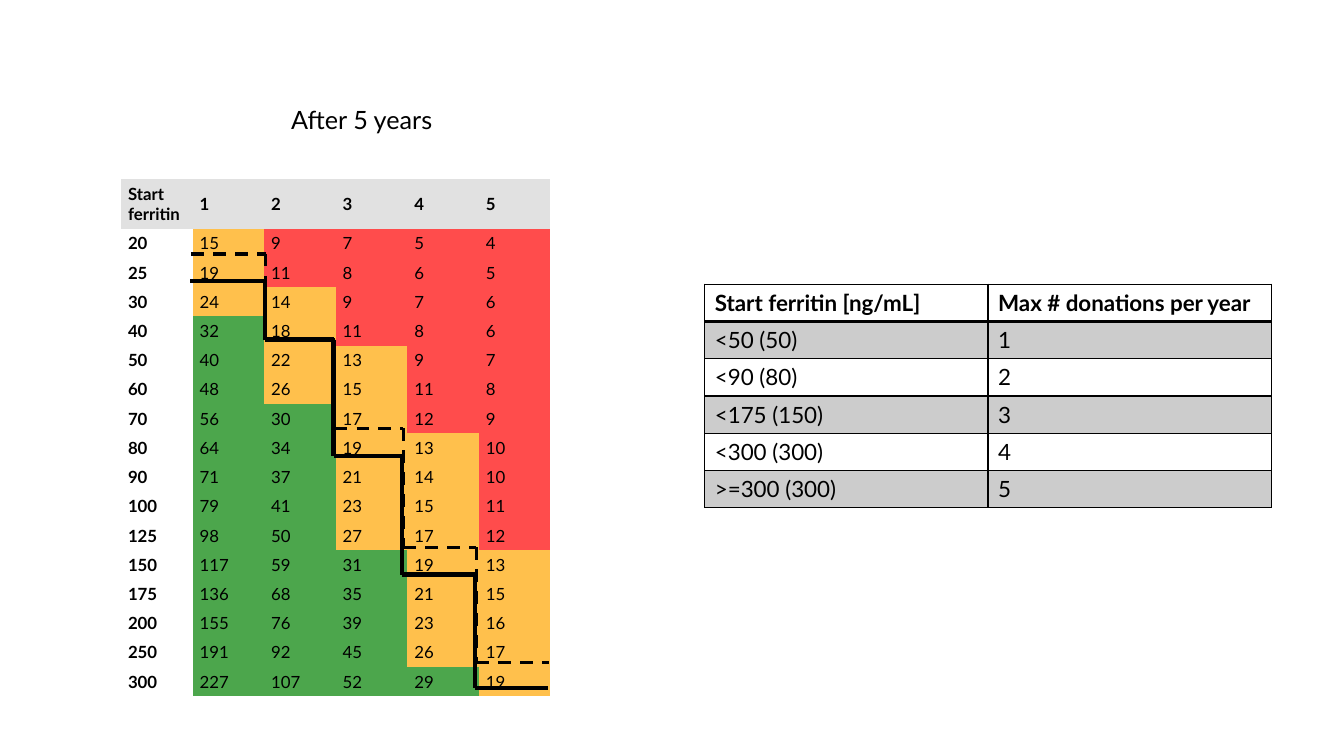
from lxml import etree
from pptx import Presentation
from pptx import util as u
from pptx.dml.color import RGBColor
from pptx.enum import dml, shapes, text
from pptx.oxml import ns

WIDTH, HEIGHT = 13.33, 7.5
FONT = "Lato"
COLORS = {"ink": "000000", "header": "E1E1E1", "low": "FF4C4C",
          "medium": "FFC04C", "high": "4CA64C", "band": "CCCCCC"}
PLAIN_TABLE = "{2D5ABB26-0587-4C30-8999-92F81FD0307C}"

# Ferritin grid: one column and one row are the units for the stair lines
LEFT, TOP, COLUMN, HEADER_ROW, ROW = 1.2, 1.78, 0.71, 0.49, 0.29
FERRITIN_HEADER = ["Start ferritin", 1, 2, 3, 4, 5]
FERRITIN = [
    [20, 15, 9, 7, 5, 4],
    [25, 19, 11, 8, 6, 5],
    [30, 24, 14, 9, 7, 6],
    [40, 32, 18, 11, 8, 6],
    [50, 40, 22, 13, 9, 7],
    [60, 48, 26, 15, 11, 8],
    [70, 56, 30, 17, 12, 9],
    [80, 64, 34, 19, 13, 10],
    [90, 71, 37, 21, 14, 10],
    [100, 79, 41, 23, 15, 11],
    [125, 98, 50, 27, 17, 12],
    [150, 117, 59, 31, 19, 13],
    [175, 136, 68, 35, 21, 15],
    [200, 155, 76, 39, 23, 16],
    [250, 191, 92, 45, 26, 17],
    [300, 227, 107, 52, 29, 19],
]
LIMITS = [
    ["Start ferritin [ng/mL]", "Max # donations per year"],
    ["<50 (50)", 1],
    ["<90 (80)", 2],
    ["<175 (150)", 3],
    ["<300 (300)", 4],
    [">=300 (300)", 5],
]

# Stair corners, in columns from LEFT and rows below the header
STAIR_COLUMNS = [0.97, 2.01, 2.97, 3.93, 4.95, 5.96]
DASHED_ROWS = [0.86, 3.79, 6.83, 10.9, 14.83]
SOLID_ROWS = [1.79, 3.79, 7.76, 11.83, 15.72]


def color(name):
    return RGBColor.from_string(COLORS[name])


def write(frame, content, size, bold=False):
    run = frame.paragraphs[0].add_run()
    run.text = str(content)
    for key, value in {"name": FONT, "size": u.Pt(size), "bold": bold}.items():
        setattr(run.font, key, value)
    run.font.color.rgb = color("ink")


def add_title(slide, content, left, top, width, height):
    shape = slide.shapes.add_textbox(*map(u.Inches, (left, top, width, height)))
    shape.text_frame.word_wrap = True
    shape.text_frame.auto_size = text.MSO_AUTO_SIZE.SHAPE_TO_FIT_TEXT
    write(shape.text_frame, content, 18)


def add_border(cell, side, width):
    properties = cell._tc.get_or_add_tcPr()
    line = etree.SubElement(properties, ns.qn(f"a:ln{side}"), w=str(u.Pt(width)))
    fill = etree.SubElement(line, ns.qn("a:solidFill"))
    etree.SubElement(fill, ns.qn("a:srgbClr"), val=COLORS["ink"])


def add_grid(slide, rows, left, top, column_width, row_heights, style_cell):
    shape = slide.shapes.add_table(
        len(rows), len(rows[0]), u.Inches(left), u.Inches(top),
        u.Inches(column_width * len(rows[0])), u.Inches(sum(row_heights)))
    table = shape.table
    table.first_row = table.horz_banding = False
    table._tbl.tblPr.find(ns.qn("a:tableStyleId")).text = PLAIN_TABLE
    for column in table.columns:
        column.width = u.Inches(column_width)
    for r, values in enumerate(rows):
        table.rows[r].height = u.Inches(row_heights[r])
        for c, value in enumerate(values):
            style_cell(table.cell(r, c), r, c, value)


def fill_cell(cell, name):
    if name:
        cell.fill.solid()
        cell.fill.fore_color.rgb = color(name)
    else:
        cell.fill.background()


def ferritin_level(value):
    return "low" if value < 13 else "medium" if value < 28 else "high"


def style_ferritin(cell, r, c, value):
    margins = {"margin_left": 0.07, "margin_right": 0.07,
               "margin_top": 0.04, "margin_bottom": 0.04}
    for key, inches in margins.items():
        setattr(cell, key, u.Inches(inches))
    cell.vertical_anchor = text.MSO_ANCHOR.MIDDLE
    fill_cell(cell, "header" if r == 0 else ferritin_level(value) if c else None)
    write(cell.text_frame, value, 12, bold=r == 0 or c == 0)


def style_limit(cell, r, c, value):
    thick = {"B": r == 0, "T": r == 1}
    for side in "LRTB":
        add_border(cell, side, 2 if thick.get(side) else 1)
    fill_cell(cell, "band" if r % 2 else None)
    write(cell.text_frame, value, 16, bold=r == 0)


def add_line(group, start, end, line_format):
    points = [u.Inches(value) for value in (*start, *end)]
    connector = group.shapes.add_connector(shapes.MSO_CONNECTOR.STRAIGHT, *points)
    connector.line.color.rgb = color("ink")
    for key, value in line_format.items():
        setattr(connector.line, key, value)
    etree.SubElement(connector._element.spPr, ns.qn("a:effectLst"))


def add_stair(slide, row_positions, shift, line_format):
    group = slide.shapes.add_group_shape()
    xs = [LEFT + column * COLUMN + shift for column in STAIR_COLUMNS]
    ys = [TOP + HEADER_ROW + row * ROW for row in row_positions]
    for i, y in enumerate(ys):
        add_line(group, (xs[i], y), (xs[i + 1], y), line_format)
        if i + 1 < len(ys):
            add_line(group, (xs[i + 1], y), (xs[i + 1], ys[i + 1]), line_format)


def main():
    presentation = Presentation()
    presentation.slide_width = u.Inches(WIDTH)
    presentation.slide_height = u.Inches(HEIGHT)
    slide = presentation.slides.add_slide(presentation.slide_layouts[6])

    # Ferritin after five years, by donations per year
    add_grid(slide, [FERRITIN_HEADER] + FERRITIN, LEFT, TOP, COLUMN,
             [HEADER_ROW] + [ROW] * len(FERRITIN), style_ferritin)
    add_title(slide, "After 5 years", 2.79, 0.99, 7.92, 0.4)

    # Threshold stairs
    add_stair(slide, DASHED_ROWS, 0.01,
              {"width": u.Pt(2.25), "dash_style": dml.MSO_LINE.DASH})
    add_stair(slide, SOLID_ROWS, 0, {"width": u.Pt(3)})

    # Donation limits
    add_grid(slide, LIMITS, 6.99, 2.82, 2.81, [0.37] * len(LIMITS), style_limit)

    presentation.save("out.pptx")


if __name__ == "__main__":
    main()
